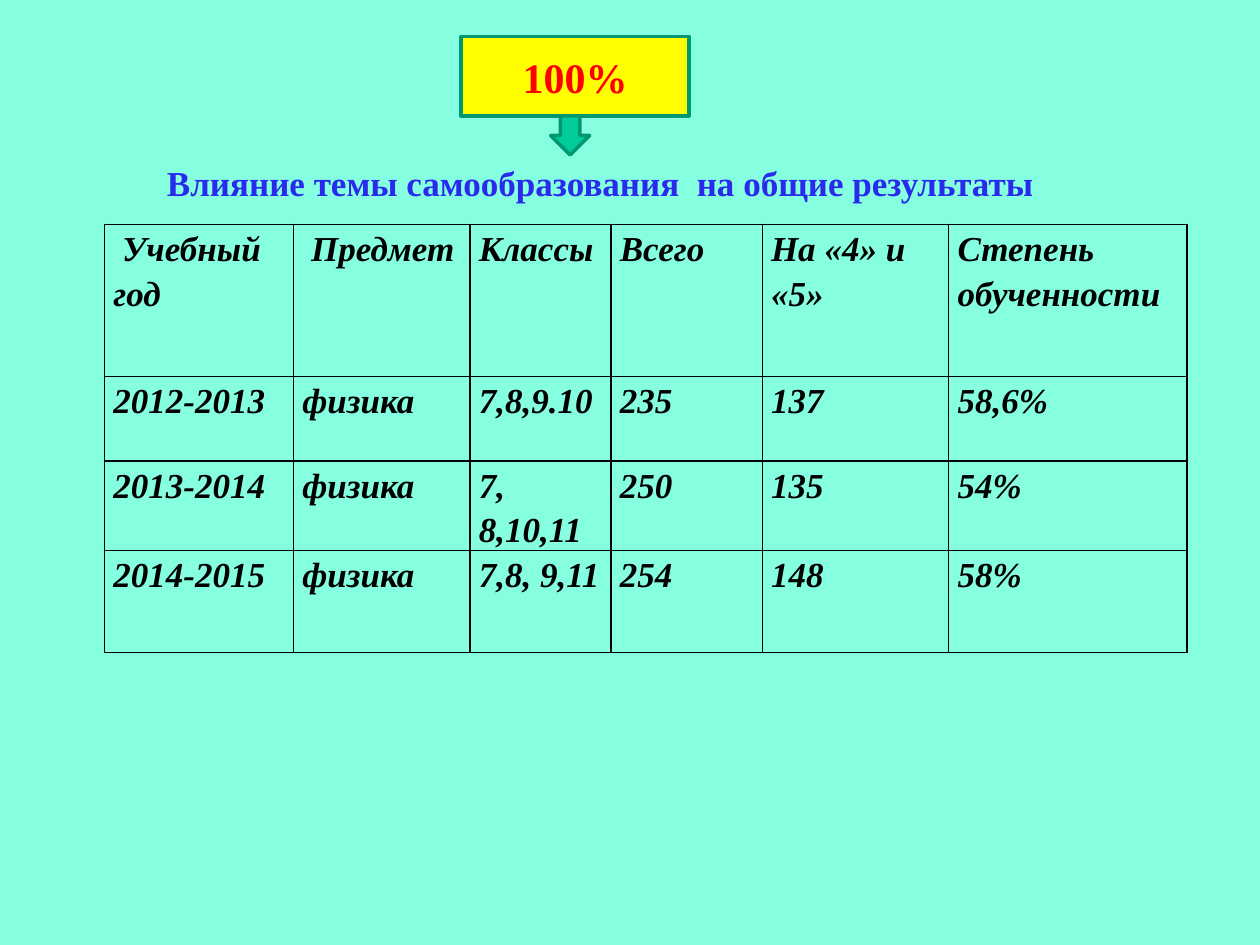
from dataclasses import dataclass

from lxml import etree
from pptx import Presentation
from pptx import util as u
from pptx.dml.color import RGBColor
from pptx.enum import shapes, text
from pptx.oxml.ns import qn

COLORS = {
    "background": "85FFE0",
    "heading": "2A2AED",
    "ink": "000000",
    "badge": "FFFF00",
    "badge_text": "FF0000",
    "arrow": "00CC99",
    "outline": "009771",
}
FONT = "Times New Roman"
COLUMN_WIDTHS = (1.5, 1.4, 1.12, 1.2, 1.48, 1.89)
ROW_HEIGHTS = (1.21, 0.67, 0.61, 0.81)
RESULTS = (
    (" Учебный год", " Предмет", "Классы", "Всего", "На «4» и «5»", "Степень обученности"),
    ("2012-2013", "физика", "7,8,9.10", "235", "137", "58,6%"),
    ("2013-2014", "физика", "7, 8,10,11", "250", "135", "54%"),
    ("2014-2015", "физика", "7,8, 9,11", "254", "148", "58%"),
)


@dataclass
class Block:
    kind: shapes.MSO_SHAPE
    left: float
    top: float
    width: float
    height: float
    fill: str
    label: str = ""


BLOCKS = (
    Block(shapes.MSO_SHAPE.RECTANGLE, 3.66, 0.29, 1.81, 0.63, "badge", "100%"),
    Block(shapes.MSO_SHAPE.DOWN_ARROW, 4.37, 0.92, 0.31, 0.31, "arrow"),
)


def color(name: str) -> RGBColor:
    return RGBColor.from_string(COLORS[name])


def format_text(para, size: int, ink: str, italic: bool = False) -> None:
    for span in para.runs:
        span.font.name = FONT
        span.font.size = u.Pt(size)
        span.font.bold = True
        span.font.italic = italic
        span.font.color.rgb = color(ink)


def add_borders(cell) -> None:
    properties = cell._tc.get_or_add_tcPr()
    for position, side in enumerate(("lnL", "lnR", "lnT", "lnB")):
        line = etree.Element(qn(f"a:{side}"), w=str(u.Pt(1)))
        fill = etree.SubElement(line, qn("a:solidFill"))
        etree.SubElement(fill, qn("a:srgbClr"), val=COLORS["ink"])
        properties.insert(position, line)


def add_results(page) -> None:
    frame = page.shapes.add_table(
        len(ROW_HEIGHTS), len(COLUMN_WIDTHS), u.Inches(0.83), u.Inches(1.78),
        u.Inches(sum(COLUMN_WIDTHS)), u.Inches(sum(ROW_HEIGHTS)),
    )
    table = frame.table
    table.first_row = table.horz_banding = False
    for column, width in zip(table.columns, COLUMN_WIDTHS):
        column.width = u.Inches(width)
    for row, height, values in zip(table.rows, ROW_HEIGHTS, RESULTS):
        row.height = u.Inches(height)
        for cell, value in zip(row.cells, values):
            cell.margin_left = cell.margin_right = u.Inches(0.07)
            cell.margin_top = cell.margin_bottom = 0
            cell.fill.background()
            add_borders(cell)
            para = cell.text_frame.paragraphs[0]
            para.text = value
            para.line_spacing = 1.15
            format_text(para, 20, "ink", italic=True)


def add_heading(page) -> None:
    title = page.shapes.title
    title.left, title.top = u.Inches(0.59), u.Inches(1.23)
    title.width, title.height = u.Inches(8.35), u.Inches(0.44)
    frame = title.text_frame
    frame.text = "Влияние темы самообразования  на общие результаты"
    frame.word_wrap = True
    frame.auto_size = text.MSO_AUTO_SIZE.NONE
    frame.vertical_anchor = text.MSO_ANCHOR.TOP
    para = frame.paragraphs[0]
    para.alignment = text.PP_ALIGN.CENTER
    format_text(para, 20, "heading")


def add_block(page, block: Block) -> None:
    shape = page.shapes.add_shape(
        block.kind, u.Inches(block.left), u.Inches(block.top),
        u.Inches(block.width), u.Inches(block.height),
    )
    shape.shadow.inherit = False
    shape.fill.solid()
    shape.fill.fore_color.rgb = color(block.fill)
    shape.line.color.rgb = color("outline")
    shape.line.width = u.Pt(2)
    if block.label:
        frame = shape.text_frame
        frame.text = block.label
        frame.vertical_anchor = text.MSO_ANCHOR.MIDDLE
        para = frame.paragraphs[0]
        para.alignment = text.PP_ALIGN.CENTER
        format_text(para, 24, "badge_text")


def main() -> None:
    deck = Presentation()
    deck.slide_width, deck.slide_height = u.Inches(10), u.Inches(7.5)
    page = deck.slides.add_slide(deck.slide_layouts.get_by_name("Title Only"))
    page.background.fill.solid()
    page.background.fill.fore_color.rgb = color("background")
    add_results(page)
    add_heading(page)
    for block in BLOCKS:
        add_block(page, block)
    deck.save("out.pptx")


if __name__ == "__main__":
    main()
